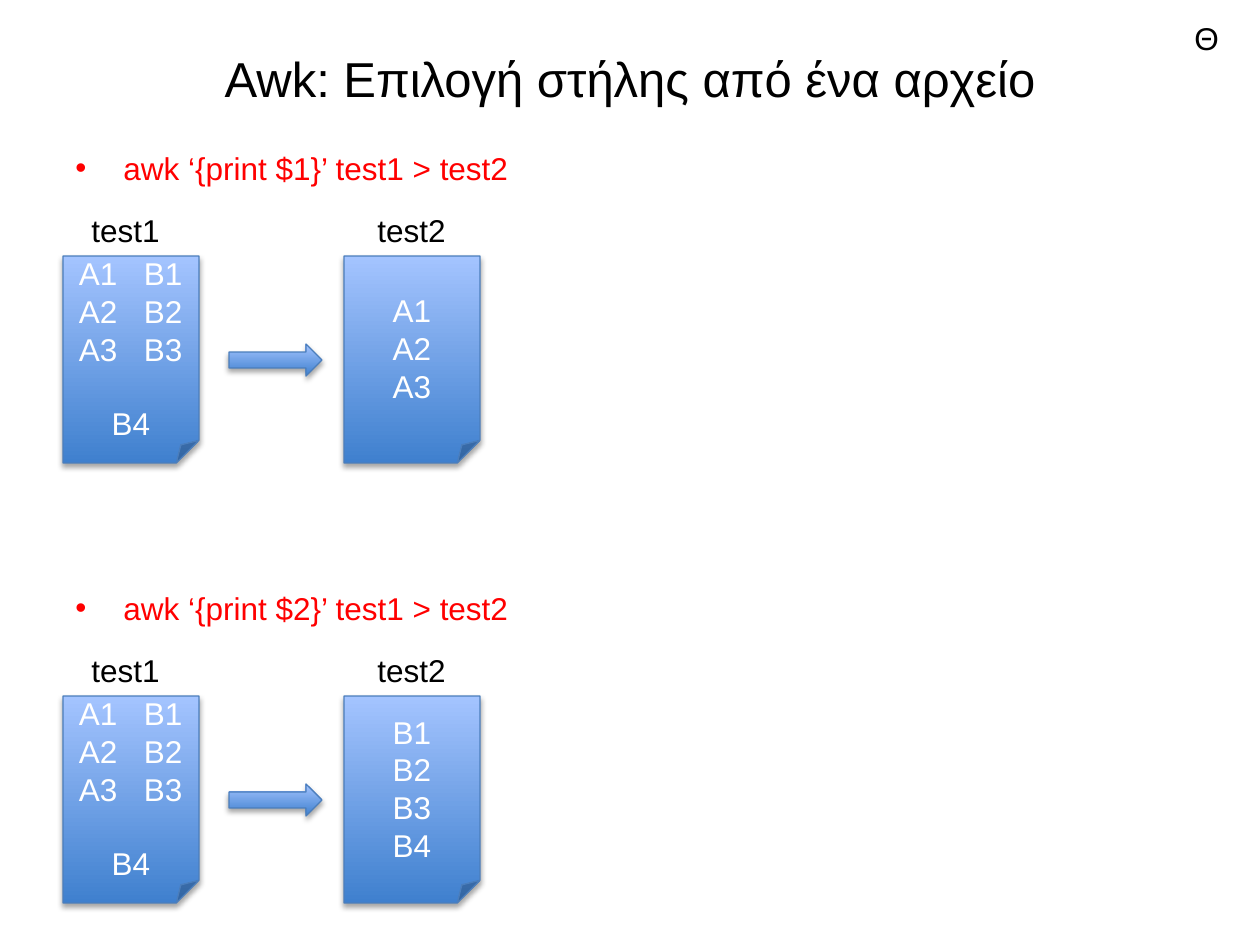
from lxml.etree import SubElement
from pptx import Presentation
from pptx.dml.color import RGBColor
from pptx.enum.shapes import MSO_SHAPE as Shape
from pptx.enum.text import MSO_ANCHOR as Anchor, PP_ALIGN as Align
from pptx.oxml.ns import qn
from pptx.util import Pt

PX = 914400 / 126
COLORS = {
    "text": "000000", "command": "FF0000", "cell": "FFFFFF",
    "low": "3F80CE", "high": "A4C4FF", "edge": "4B7EBC", "shadow": "000000",
}
TABLE_ROWS = ["A1\tB1", "A2\tB2", "A3\tB3"]


def px(length):
    return round(length * PX)


def rgb(name):
    return RGBColor.from_string(COLORS[name])


def place(left, top, width, height):
    return [px(length) for length in (left, top, width, height)]


def write(para, text, color, size=18, align=Align.LEFT):
    para.alignment = align
    span = para.add_run()
    span.text = text
    span.font.name = "Arial"
    span.font.size = Pt(size)
    span.font.color.rgb = rgb(color)


def add_text(page, box, text, color="text", wrap=True, **style):
    frame = page.shapes.add_textbox(*place(*box)).text_frame
    frame.word_wrap = wrap
    write(frame.paragraphs[0], text, color, **style)
    return frame


def add_title(page, box):
    frame = add_text(page, box, "Awk: Επιλογή στήλης από ένα αρχείο",
                     size=28, align=Align.CENTER)
    frame.vertical_anchor = Anchor.MIDDLE


def add_command(page, box, text):
    """Bulleted line with a hanging indent."""
    frame = add_text(page, box, text, "command")
    props = frame.paragraphs[0]._p.get_or_add_pPr()
    props.set("marL", str(px(48)))
    props.set("indent", str(-px(48)))
    SubElement(props, qn("a:buFont"), typeface="Arial")
    SubElement(props, qn("a:buChar"), char="•")


def add_glossy(page, kind, box):
    """Shape with the blue gradient, thin edge and soft shadow below."""
    shape = page.shapes.add_shape(kind, *place(*box))
    shape.fill.gradient()
    shape.fill.gradient_angle = 90
    for stop, name, position in zip(shape.fill.gradient_stops, ("low", "high"), (0, 1)):
        stop.color.rgb = rgb(name)
        stop.position = position
    shape.line.color.rgb = rgb("edge")
    shape.line.width = Pt(0.75)
    shape.shadow.inherit = False
    effects = shape._element.spPr.find(qn("a:effectLst"))
    outer = SubElement(effects, qn("a:outerShdw"), blurRad=str(Pt(3.1)),
                       dist=str(Pt(1.8)), dir="5400000", rotWithShape="0")
    color = SubElement(outer, qn("a:srgbClr"), val=COLORS["shadow"])
    SubElement(color, qn("a:alpha"), val="35000")
    return shape


def add_file(page, box, rows, align=Align.CENTER):
    frame = add_glossy(page, Shape.FOLDED_CORNER, box).text_frame
    frame.word_wrap = True
    frame.vertical_anchor = Anchor.MIDDLE
    for index, row in enumerate(rows):
        para = frame.add_paragraph() if index else frame.paragraphs[0]
        write(para, row, "cell", align=align)
    return frame


def add_source_file(page, box):
    """Two tabbed columns, then a last row with only the second value."""
    frame = add_file(page, box, TABLE_ROWS, Align.LEFT)
    frame.margin_left = px(16)
    frame.margin_right = px(16)
    for para in frame.paragraphs:
        tabs = SubElement(para._p.get_or_add_pPr(), qn("a:tabLst"))
        SubElement(tabs, qn("a:tab"), pos=str(px(65)), algn="l")
    last = frame.add_paragraph()
    last.space_before = Pt(21)
    write(last, "B4", "cell", align=Align.CENTER)


def add_example(page, box, command, result):
    """Command line above source file, arrow and result file."""
    left, top, width, height = box
    file_top, file_width, file_height = top + 113, 136, height - 113
    result_left = left + 281
    add_command(page, (left, top, width, 62), command)
    for label_left, name in ((left + 16, "test1"), (left + 302, "test2")):
        add_text(page, (label_left, top + 62, 95, 51), name, wrap=False)
    add_source_file(page, (left, file_top, file_width, file_height))
    add_glossy(page, Shape.RIGHT_ARROW, (left + 166, top + 201, 93, 32))
    add_file(page, (result_left, file_top, file_width, file_height), result)


def main():
    deck = Presentation()
    deck.slide_width, deck.slide_height = px(1260), px(945)
    page = deck.slides.add_slide(deck.slide_layouts[6])

    add_title(page, (63, 38, 1134, 79))
    examples = [
        ("awk ‘{print $1}’ test1 > test2", ["A1", "A2", "A3"]),
        ("awk ‘{print $2}’ test1 > test2", ["Β1", "Β2", "Β3", "Β4"]),
    ]
    for index, (command, result) in enumerate(examples):
        add_example(page, (63, 143 + 440 * index, 1134, 320), command, result)

    # Corner mark
    add_text(page, (1182, 13, 63, 50), "Θ")

    deck.save("out.pptx")


if __name__ == "__main__":
    main()
